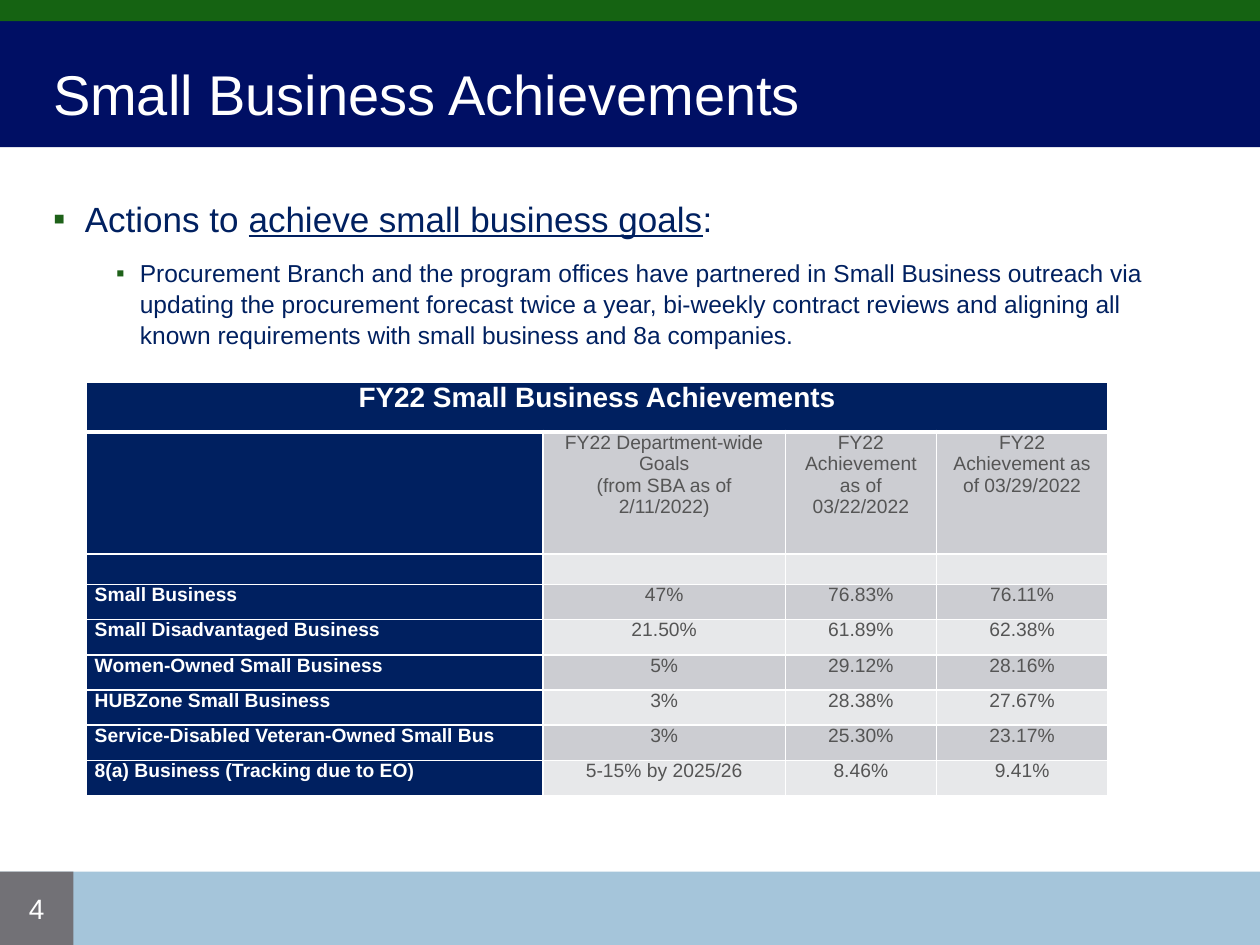
from lxml.etree import SubElement
from pptx import Presentation
from pptx.dml.color import RGBColor
from pptx.enum.shapes import MSO_SHAPE as Shape
from pptx.enum.text import MSO_ANCHOR as Anchor, PP_ALIGN as Align
from pptx.oxml.ns import qn
from pptx.util import Cm, Pt

WHITE = RGBColor(0xFF, 0xFF, 0xFF)
BANNER_BLUE = RGBColor(0x00, 0x0F, 0x64)
FOOTER_BLUE = RGBColor(0xA5, 0xC5, 0xDA)
GREEN = RGBColor(0x15, 0x63, 0x12)
BULLET_GREEN = RGBColor(0x1E, 0x61, 0x19)
NUMBER_GRAY = RGBColor(0x72, 0x71, 0x76)
NAVY = RGBColor(0x00, 0x20, 0x60)
TEXT_GRAY = RGBColor(0x55, 0x55, 0x55)
BAND_DARK = RGBColor(0xCC, 0xCD, 0xD2)
BAND_LIGHT = RGBColor(0xE7, 0xE8, 0xEA)


def add_run(paragraph, text, size, color, bold=False, underline=False):
    run = paragraph.add_run()
    run.text = text
    run.font.name = "Arial"
    run.font.size = Pt(size)
    run.font.color.rgb = color
    run.font.bold = bold
    run.font.underline = underline


def add_text_box(left, top, width, height, anchor):
    frame = slide.shapes.add_textbox(Cm(left), Cm(top), Cm(width), Cm(height)).text_frame
    frame.word_wrap = True
    frame.vertical_anchor = anchor
    frame.margin_left = frame.margin_right = 0
    frame.margin_top = frame.margin_bottom = Cm(0.13)
    return frame


prs = Presentation()
prs.slide_width, prs.slide_height = Cm(25.4), Cm(19.05)
slide = prs.slides.add_slide(prs.slide_layouts[6])

bands = [
    (0, 25.4, 2.97, BANNER_BLUE),
    (17.57, 25.4, 1.48, FOOTER_BLUE),
    (0, 25.4, 0.43, GREEN),
    (17.57, 1.48, 1.48, NUMBER_GRAY),
]
for top, width, height, color in bands:
    band = slide.shapes.add_shape(Shape.RECTANGLE, 0, Cm(top), Cm(width), Cm(height))
    band.shadow.inherit = False
    band.fill.solid()
    band.fill.fore_color.rgb = color
    band.line.fill.background()

page_number = band.text_frame
page_number.vertical_anchor = Anchor.MIDDLE
page_number.paragraphs[0].alignment = Align.CENTER
add_run(page_number.paragraphs[0], "4", 16, WHITE)

title = add_text_box(1.07, 0.61, 23.06, 2.54, Anchor.MIDDLE)
add_run(title.paragraphs[0], "Small Business Achievements", 32, WHITE)

body = add_text_box(1.07, 3.81, 23.06, 12.9, Anchor.TOP)
goals = body.paragraphs[0]
outreach = body.add_paragraph()
outreach.level = 1
outreach.space_before = Pt(3)
for paragraph, indent, hanging in ((goals, 0.64, 0.64), (outreach, 1.75, 0.48)):
    paragraph.line_spacing = 1.05
    paragraph.space_after = Pt(7)
    properties = paragraph._p.get_or_add_pPr()
    properties.set("marL", str(Cm(indent)))
    properties.set("indent", str(-Cm(hanging)))
    bullet_color = SubElement(properties, qn("a:buClr"))
    SubElement(bullet_color, qn("a:srgbClr"), val=str(BULLET_GREEN))
    SubElement(properties, qn("a:buFont"), typeface="Arial")
    SubElement(properties, qn("a:buChar"), char="▪")

add_run(goals, "Actions to ", 20, NAVY)
add_run(goals, "achieve small business goals", 20, NAVY, underline=True)
add_run(goals, ":", 20, NAVY)
add_run(
    outreach,
    "Procurement Branch and the program offices have partnered in Small Business "
    "outreach via updating the procurement forecast twice a year, bi-weekly contract "
    "reviews and aligning all known requirements with small business and 8a companies.",
    14, NAVY,
)

achievements = [
    ("FY22 Small Business Achievements", "", "", ""),
    ("", "FY22 Department-wide Goals\n(from SBA as of 2/11/2022)",
     "FY22 Achievement as of 03/22/2022", "FY22\nAchievement as of 03/29/2022"),
    ("", "", "", ""),
    ("Small Business", "47%", "76.83%", "76.11%"),
    ("Small Disadvantaged Business", "21.50%", "61.89%", "62.38%"),
    ("Women-Owned Small Business", "5%", "29.12%", "28.16%"),
    ("HUBZone Small Business", "3%", "28.38%", "27.67%"),
    ("Service-Disabled Veteran-Owned Small Bus", "3%", "25.30%", "23.17%"),
    ("8(a) Business (Tracking due to EO)", "5-15% by 2025/26", "8.46%", "9.41%"),
]
column_widths = [9.21, 4.88, 3.05, 3.45]
row_heights = [1, 2.46, 0.61] + [0.71] * 6
table = slide.shapes.add_table(
    len(achievements), len(column_widths), Cm(1.74), Cm(7.71),
    Cm(sum(column_widths)), Cm(sum(row_heights)),
).table
table.first_row = table.horz_banding = False
for column, width in zip(table.columns, column_widths):
    column.width = Cm(width)
for row, height in zip(table.rows, row_heights):
    row.height = Cm(height)
table.cell(0, 0).merge(table.cell(0, 3))

for row, labels in enumerate(achievements):
    for col, label in enumerate(labels):
        cell = table.cell(row, col)
        cell.margin_left = cell.margin_right = Cm(0.17)
        cell.margin_top = cell.margin_bottom = 0
        for side in ("lnL", "lnR", "lnT", "lnB"):
            thick = (row, side) in ((0, "lnB"), (1, "lnT"))
            border = SubElement(cell._tc.get_or_add_tcPr(), qn(f"a:{side}"),
                                w=str(Pt(3 if thick else 1)))
            border_fill = SubElement(border, qn("a:solidFill"))
            SubElement(border_fill, qn("a:srgbClr"), val=str(WHITE))
        heading = row == 0 or col == 0
        cell.fill.solid()
        cell.fill.fore_color.rgb = NAVY if heading else BAND_DARK if row % 2 else BAND_LIGHT
        for number, line in enumerate(label.split("\n")):
            paragraph = cell.text_frame.add_paragraph() if number else cell.text_frame.paragraphs[0]
            paragraph.alignment = Align.CENTER if row == 0 or col else Align.LEFT
            if line:
                add_run(paragraph, line, 16 if row == 0 else 11,
                        WHITE if heading else TEXT_GRAY, bold=heading)
            else:
                SubElement(paragraph._p, qn("a:endParaRPr"), sz="1100")

prs.save("out.pptx")
